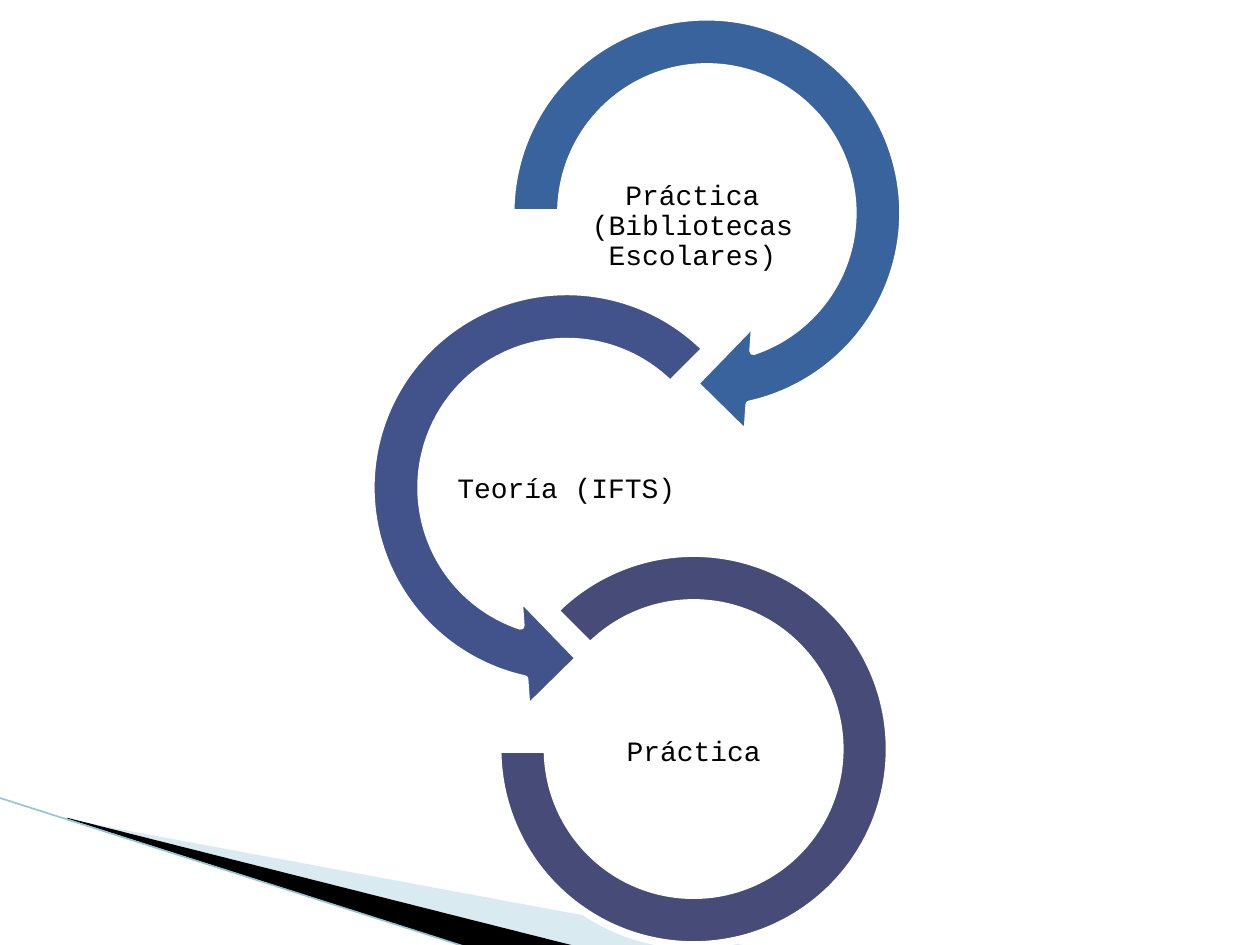
from lxml.etree import SubElement
from pptx import Presentation
from pptx.dml.color import RGBColor
from pptx.enum.shapes import MSO_CONNECTOR, MSO_SHAPE
from pptx.enum.text import MSO_ANCHOR, PP_ALIGN
from pptx.oxml.ns import qn
from pptx.util import Pt


def color(hex_value):
    return RGBColor.from_string(hex_value)


class SlideBuilder:
    font_name = "Courier New"
    font_size = 16
    text_color = "000000"
    outline_color = "FFFFFF"
    outline_width = 4.33
    label_width, label_height = 144.72, 72.72
    label_inset = 0.9

    def __init__(self, slide):
        self.slide = slide

    def polygon(self, points, fill, opacity=None):
        """Draw a closed outline; opacity is a percentage."""
        corners = [(Pt(x), Pt(y)) for x, y in points]
        builder = self.slide.shapes.build_freeform(*corners[0])
        builder.add_line_segments(corners[1:], close=True)
        shape = builder.convert_to_shape()
        shape.shadow.inherit = False
        shape.fill.solid()
        shape.fill.fore_color.rgb = color(fill)
        shape.line.fill.background()
        if opacity is not None:
            fill_color = shape.fill._xPr.find(qn("a:solidFill"))[0]
            SubElement(fill_color, qn("a:alpha"), val=str(opacity * 1000))

    def line(self, start, end, line_color, width):
        connector = self.slide.shapes.add_connector(
            MSO_CONNECTOR.STRAIGHT, *(Pt(value) for value in start + end))
        connector.line.color.rgb = color(line_color)
        connector.line.width = Pt(width)
        SubElement(connector._element.spPr, qn("a:effectLst"))

    def ring(self, kind, left, top, size, adjustments, fill):
        shape = self.slide.shapes.add_shape(
            kind, Pt(left), Pt(top), Pt(size), Pt(size))
        for index, value in enumerate(adjustments):
            shape.adjustments[index] = value
        shape.shadow.inherit = False
        shape.fill.solid()
        shape.fill.fore_color.rgb = color(fill)
        shape.line.color.rgb = color(self.outline_color)
        shape.line.width = Pt(self.outline_width)

    def label(self, text, left, top):
        box = self.slide.shapes.add_textbox(
            Pt(left), Pt(top), Pt(self.label_width), Pt(self.label_height))
        frame = box.text_frame
        frame.word_wrap = True
        frame.vertical_anchor = MSO_ANCHOR.MIDDLE
        frame.margin_left = frame.margin_right = Pt(self.label_inset)
        frame.margin_top = frame.margin_bottom = Pt(self.label_inset)
        paragraph = frame.paragraphs[0]
        paragraph.text = text
        paragraph.alignment = PP_ALIGN.CENTER
        paragraph.line_spacing = 0.9
        paragraph.font.name = self.font_name
        paragraph.font.size = Pt(self.font_size)
        paragraph.font.color.rgb = color(self.text_color)


def main():
    presentation = Presentation()
    presentation.slide_width, presentation.slide_height = Pt(720), Pt(540)
    slide = presentation.slides.add_slide(presentation.slide_layouts[6])
    builder = SlideBuilder(slide)

    # Corner decoration
    builder.polygon([(39.6, 468.5), (428.4, 540.7), (328.3, 540.7), (39.6, 468)],
                    "A0CBDC", opacity=40)
    builder.polygon([(38.2, 467.3), (329, 540.7), (267.8, 541.4), (38.9, 468)],
                    "000000")
    builder.line((-0.7, 455.8), (267.1, 541.4), "97C5D8", 0.95)

    # Chain of rings, each with its label
    arrow_size, arc_size = 260.64, 223.92
    builder.ring(MSO_SHAPE.CIRCULAR_ARROW, 273.6, -8.64, arrow_size,
                 (0.11, 11.423, 45, 108, 0.125), "39639D")
    builder.label("Práctica (Bibliotecas Escolares)", 323.3, 92.9)
    builder.ring(MSO_SHAPE.LEFT_CIRCULAR_ARROW, 193.7, 148.3, arrow_size,
                 (0.11, 11.423, 63, 189, 0.125), "41538A")
    builder.label("Teoría (IFTS)", 251.3, 243.4)
    builder.ring(MSO_SHAPE.BLOCK_ARC, 284.4, 316.1, arc_size,
                 (135, 108, 0.127), "474B78")
    builder.label("Práctica", 324, 393.8)

    presentation.save("out.pptx")


if __name__ == "__main__":
    main()
